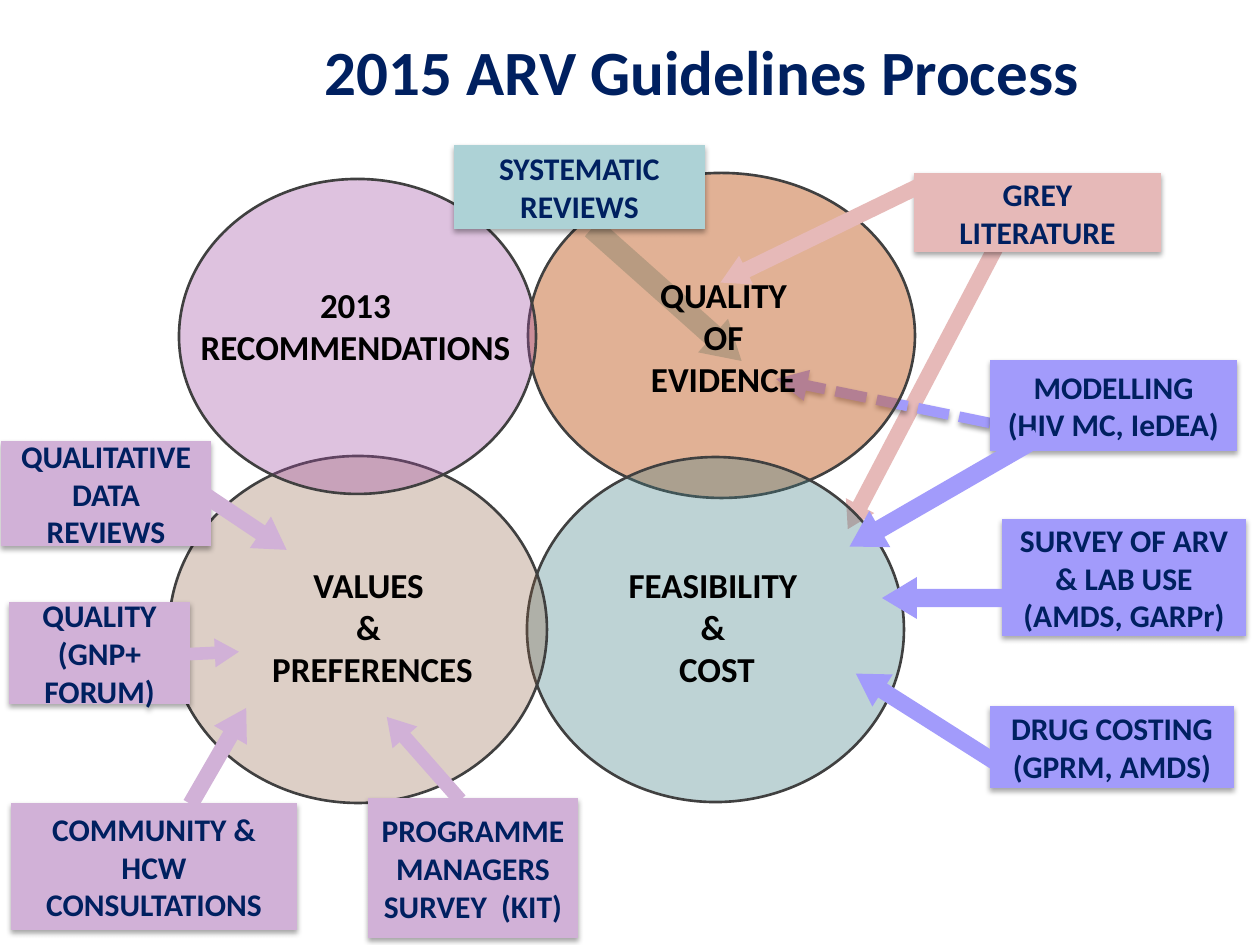
from dataclasses import dataclass

from lxml import etree
from pptx import Presentation
from pptx.dml.color import RGBColor
from pptx.enum.dml import MSO_LINE
from pptx.enum.shapes import MSO_CONNECTOR, MSO_SHAPE
from pptx.enum.text import MSO_ANCHOR, MSO_AUTO_SIZE, PP_ALIGN
from pptx.oxml.ns import qn
from pptx.util import Emu, Pt

OVAL, ARROW = MSO_SHAPE.OVAL, MSO_SHAPE.RIGHT_ARROW
CALLOUT = MSO_SHAPE.LINE_CALLOUT_3_BORDER_AND_ACCENT_BAR
STRAIGHT, DASH = MSO_CONNECTOR.STRAIGHT, MSO_LINE.SQUARE_DOT
LEFT, CENTER = PP_ALIGN.LEFT, PP_ALIGN.CENTER
TOP, MIDDLE = MSO_ANCHOR.TOP, MSO_ANCHOR.MIDDLE
NO_FIT = MSO_AUTO_SIZE.NONE
SCALE = 914400 / 126


@dataclass(frozen=True)
class Theme:
    font: str = "Calibri"
    navy: str = "002060"
    black: str = "000000"
    edge: str = "404040"
    teal: str = "ADD2D6"
    pink: str = "E6B9B8"
    blue: str = "A29BFB"
    lilac: str = "D1B1D7"
    orange: str = "C4652D"
    green: str = "438086"
    brown: str = "8B5D3D"
    purple: str = "A04DA3"
    title: int = 36
    label: int = 20
    note: int = 18


THEME = Theme()


def px(*sizes):
    return [Emu(round(size * SCALE)) for size in sizes]


def rgb(code):
    return RGBColor.from_string(code)


def write(shape, text, size=THEME.note, color=THEME.navy, align=CENTER,
          anchor=MIDDLE, wrap=True, inset=None):
    frame = shape.text_frame
    frame.auto_size = NO_FIT
    frame.word_wrap = wrap
    frame.vertical_anchor = anchor
    if inset is not None:
        frame.margin_left = frame.margin_right = inset
        frame.margin_top = frame.margin_bottom = inset
    for i, line in enumerate(text.split("\n")):
        para = frame.add_paragraph() if i else frame.paragraphs[0]
        para.alignment = align
        run = para.add_run()
        run.text = line
        run.font.name, run.font.size = THEME.font, Pt(size)
        run.font.bold, run.font.color.rgb = True, rgb(color)


def add_shadow(props, alpha, dist):
    effects = props.find(qn("a:effectLst"))
    if effects is None:
        effects = etree.SubElement(props, qn("a:effectLst"))
    outer = etree.SubElement(effects, qn("a:outerShdw"), blurRad=str(Pt(3.1)),
                             dist=str(Pt(dist)), dir="5400000", rotWithShape="0")
    tint = etree.SubElement(outer, qn("a:srgbClr"), val=THEME.black)
    etree.SubElement(tint, qn("a:alpha"), val=str(alpha * 1000))


def add_form(shapes, kind, box, fill):
    shape = shapes.add_shape(kind, *px(*box))
    shape.shadow.inherit = False
    shape.fill.solid()
    shape.fill.fore_color.rgb = rgb(fill)
    shape.line.fill.background()
    return shape


def add_oval(shapes, box, fill, alpha):
    shape = add_form(shapes, OVAL, box, fill)
    tint = shape._element.spPr.find(".//" + qn("a:srgbClr"))
    etree.SubElement(tint, qn("a:alpha"), val=str(alpha * 1000))
    shape.line.color.rgb = rgb(THEME.edge)
    shape.line.width = Pt(1.5)


def add_arrow(shapes, box, turn, fill, shaft=0.433, head=0.83):
    shape = add_form(shapes, ARROW, box, fill)
    shape.rotation = turn
    shape.adjustments[0], shape.adjustments[1] = shaft, head


def add_note(shapes, box, fill, text):
    shape = add_form(shapes, CALLOUT, box, fill)
    add_shadow(shape._element.spPr, 35, 1.8)
    write(shape, text)


def add_label(shapes, box, text):
    write(shapes.add_textbox(*px(*box)), text, size=THEME.label,
          color=THEME.black, wrap=False, inset=0)


def add_dashed(shapes, ends, color):
    line = shapes.add_connector(STRAIGHT, *px(*ends))
    line.line.color.rgb = rgb(color)
    line.line.width = Pt(6)
    line.line.dash_style = DASH
    props = line._element.spPr
    etree.SubElement(props.find(qn("a:ln")), qn("a:tailEnd"), type="triangle")
    add_shadow(props, 38, 1.6)


def add_title(slide, box, text):
    title = slide.shapes.title
    title.left, title.top, title.width, title.height = px(*box)
    write(title, text, size=THEME.title, align=LEFT, anchor=TOP)


def main():
    t = THEME
    deck = Presentation()
    deck.slide_width, deck.slide_height = px(1260, 945)
    slide = deck.slides.add_slide(deck.slide_layouts[5])
    shapes = slide.shapes
    add_title(slide, (312, 26, 878, 89), "2015 ARV Guidelines Process")

    # Arrows seen through the ovals
    add_arrow(shapes, (760, 368, 328, 32), 117.7, t.pink, shaft=0.5)
    add_arrow(shapes, (567, 272, 200, 45), 41.7, t.teal, shaft=0.5, head=0.85)
    add_dashed(shapes, (990, 423, 776, 379), t.blue)

    # Four overlapping themes
    group = shapes.add_group_shape().shapes
    add_oval(group, (528, 173, 387, 325), t.orange, 50)
    add_oval(group, (527, 457, 377, 345), t.green, 34)
    add_oval(group, (169, 456, 378, 347), t.brown, 29)
    add_label(group, (244, 592, 257, 69), "VALUES \n& \nPREFERENCES")
    add_label(group, (558, 592, 318, 69), "FEASIBILITY \n& \nCOST")
    add_oval(shapes, (179, 179, 357, 315), t.purple, 34)

    # Sources of input
    for box, fill, text in (
        ((454, 145, 251, 84), t.teal, "SYSTEMATIC REVIEWS"),
        ((914, 173, 247, 79), t.pink, "GREY LITERATURE"),
        ((990, 360, 247, 91), t.blue, "MODELLING\n(HIV MC, IeDEA)"),
        ((1002, 519, 244, 117), t.blue, "SURVEY OF ARV & LAB USE\n(AMDS, GARPr)"),
        ((990, 706, 244, 82), t.blue, "DRUG COSTING\n(GPRM, AMDS)"),
        ((1, 441, 210, 105), t.lilac, "QUALITATIVE DATA REVIEWS"),
        ((9, 602, 181, 102), t.lilac, "QUALITY (GNP+ FORUM)"),
        ((11, 803, 286, 127), t.lilac, "COMMUNITY & HCW CONSULTATIONS"),
        ((368, 798, 210, 140), t.lilac, "PROGRAMME MANAGERS SURVEY  (KIT)"),
    ):
        add_note(shapes, box, fill, text)

    # Arrows from the sources to the themes
    add_arrow(shapes, (709, 217, 227, 32), 154.1, t.pink, shaft=0.5, head=0.89)
    for box, turn, fill in (
        ((835, 471, 218, 42), 150, t.blue),
        ((882, 577, 126, 42), 180, t.blue),
        ((843, 699, 166, 38), 212.4, t.blue),
        ((163, 737, 111, 38), 300, t.lilac),
        ((368, 742, 111, 33), 228.6, t.lilac),
        ((185, 500, 111, 38), 33.8, t.lilac),
        ((165, 639, 74, 29), 357.3, t.lilac),
    ):
        add_arrow(shapes, box, turn, fill)

    # Labels of the upper themes
    add_label(shapes, (231, 273, 257, 105), "2013 \nRECOMMENDATIONS ")
    add_label(shapes, (599, 294, 257, 84), "QUALITY \nOF \nEVIDENCE ")

    deck.save("out.pptx")


if __name__ == "__main__":
    main()
